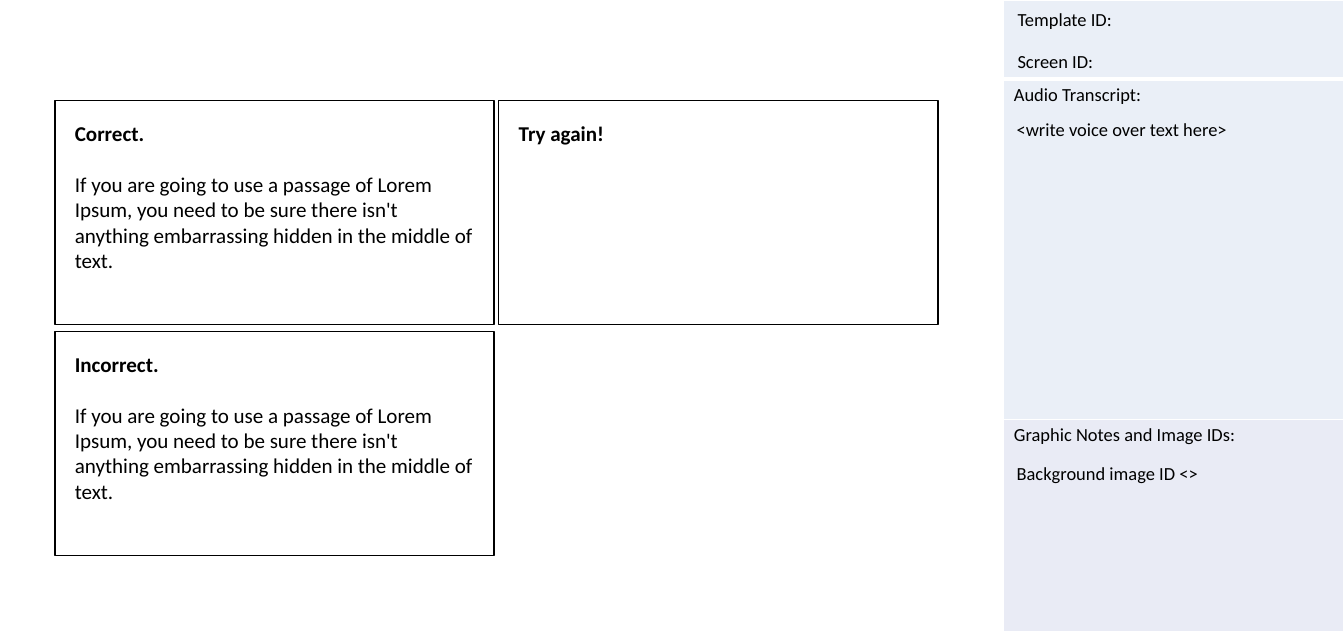
from lxml import etree
from pptx import Presentation
from pptx.dml.color import RGBColor
from pptx.enum.shapes import MSO_SHAPE
from pptx.enum.text import MSO_ANCHOR, PP_ALIGN
from pptx.oxml.ns import qn
from pptx.util import Inches, Pt

FONT = "Calibri"
BLACK, WHITE = "000000", "FFFFFF"
PANEL_BLUE, PANEL_LILAC = "EAEFF7", "E9EBF5"
LOREM = ("If you are going to use a passage of Lorem Ipsum, you need to be sure "
         "there isn't anything embarrassing hidden in the middle of text.")

CARD_LEFT, CARD_TOP = 0.58, 1.06
CARD_WIDTH, CARD_HEIGHT = 4.63, 2.36
COLUMN_STEP, ROW_STEP = 4.68, 2.43

# column, row, heading, body
CARDS = [
    (0, 0, "Correct.", LOREM),
    (0, 1, "Incorrect.", LOREM),
    (1, 0, "Try again!", None),
]

# height, heading, fill, top border, bottom border
PANEL_ROWS = [
    (0.83, "", PANEL_BLUE, 1, 3),
    (3.59, "Audio Transcript:", PANEL_BLUE, 3, 1),
    (2.23, "Graphic Notes and Image IDs:", PANEL_LILAC, 1, 1),
]

# left, top, text
LABELS = [
    (10.63, 0.48, "Screen ID:"),
    (10.63, 0.04, "Template ID:"),
    (10.62, 1.19, "<write voice over text here>"),
    (10.62, 4.82, "Background image ID <>"),
]


def color(value):
    return RGBColor.from_string(value)


def write(paragraph, text, size, bold=False):
    paragraph.text = text
    paragraph.alignment = PP_ALIGN.LEFT
    font = paragraph.font
    font.name, font.size, font.bold = FONT, Pt(size), bold
    font.color.rgb = color(BLACK)


def set_borders(cell, top, bottom):
    """Draw white borders; they must precede the fill in the cell properties."""
    properties = cell._tc.get_or_add_tcPr()
    sides = [("L", 1), ("R", 1), ("T", top), ("B", bottom)]
    for index, (side, width) in enumerate(sides):
        line = etree.Element(qn(f"a:ln{side}"), w=str(Pt(width)))
        fill = etree.SubElement(line, qn("a:solidFill"))
        etree.SubElement(fill, qn("a:srgbClr"), val=WHITE)
        properties.insert(index, line)


def add_panel(page):
    height = sum(row[0] for row in PANEL_ROWS)
    frame = page.shapes.add_table(len(PANEL_ROWS), 1, Inches(10.58), 0,
                                  Inches(3.59), Inches(height))
    table = frame.table
    for index, (height, heading, fill, top, bottom) in enumerate(PANEL_ROWS):
        table.rows[index].height = Inches(height)
        cell = table.cell(index, 0)
        cell.fill.solid()
        cell.fill.fore_color.rgb = color(fill)
        cell.margin_left = cell.margin_right = Inches(0.11)
        set_borders(cell, top, bottom)
        if heading:
            write(cell.text_frame.paragraphs[0], heading, 14)


def add_label(page, left, top, text):
    box = page.shapes.add_textbox(Inches(left), Inches(top), Inches(3.54), Inches(0.34))
    box.text_frame.word_wrap = True
    write(box.text_frame.paragraphs[0], text, 14)


def add_card(page, column, row, heading, body):
    card = page.shapes.add_shape(
        MSO_SHAPE.RECTANGLE,
        Inches(CARD_LEFT + column * COLUMN_STEP), Inches(CARD_TOP + row * ROW_STEP),
        Inches(CARD_WIDTH), Inches(CARD_HEIGHT))
    card.shadow.inherit = False
    card.fill.solid()
    card.fill.fore_color.rgb = color(WHITE)
    card.line.color.rgb = color(BLACK)
    card.line.width = Pt(1)
    frame = card.text_frame
    frame.word_wrap = True
    frame.vertical_anchor = MSO_ANCHOR.TOP
    frame.margin_left = frame.margin_right = Inches(0.21)
    frame.margin_top = frame.margin_bottom = Inches(0.21)
    write(frame.paragraphs[0], heading, 16, bold=True)
    if body:
        paragraph = frame.add_paragraph()
        write(paragraph, body, 16)
        paragraph.space_before = Pt(19.5)


def main():
    deck = Presentation()
    deck.slide_width, deck.slide_height = Inches(14.17), Inches(6.69)
    page = deck.slides.add_slide(deck.slide_layouts[6])
    add_panel(page)
    for label in LABELS:
        add_label(page, *label)
    for card in CARDS:
        add_card(page, *card)
    deck.save("out.pptx")


if __name__ == "__main__":
    main()
